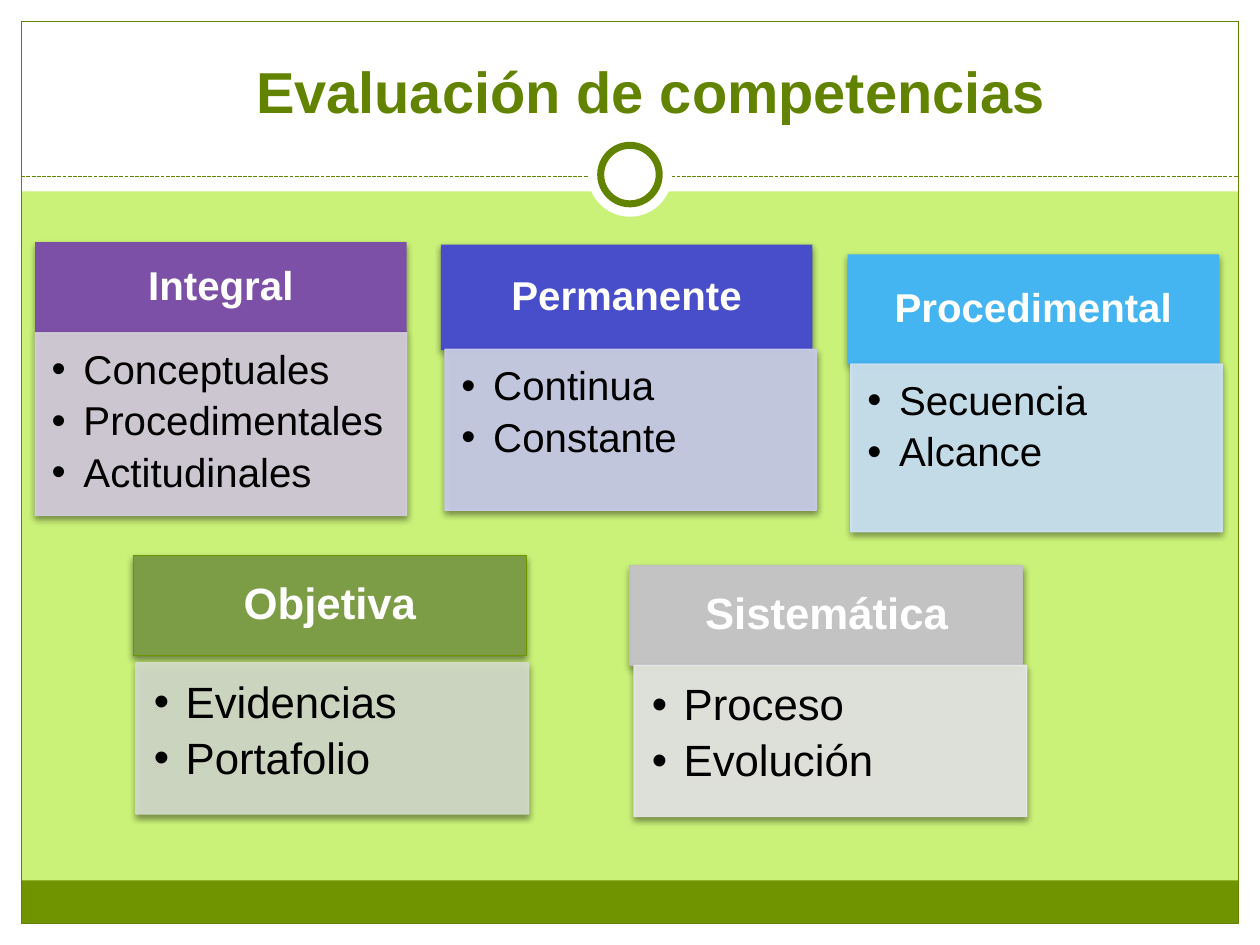
"""Build the slide on the five traits of competency assessment."""
from dataclasses import dataclass
from typing import Optional

from lxml.etree import SubElement as Sub
from pptx import Presentation
from pptx.dml.color import RGBColor as Rgb
from pptx.enum.dml import MSO_LINE as Dash
from pptx.enum.shapes import MSO_CONNECTOR as Link, MSO_SHAPE as Kind
from pptx.enum.text import MSO_ANCHOR as Anchor, PP_ALIGN as Align
from pptx.oxml.ns import qn
from pptx.util import Cm, Pt


@dataclass(frozen=True)
class Theme:
    back: str = "CAF278"
    white: str = "FFFFFF"
    black: str = "000000"
    green: str = "628300"
    band: str = "6F9400"
    edge: str = "BFBFBF"
    font: str = "Arial"
    title: float = 33
    large: float = 25
    small: float = 23
    thin: float = 0.75
    thick: float = 4


@dataclass(frozen=True)
class Box:
    left: float
    top: float
    width: float
    height: float

    def size(self) -> tuple:
        return Cm(self.left), Cm(self.top), Cm(self.width), Cm(self.height)


@dataclass(frozen=True)
class Card:
    name: str
    items: tuple[str, ...]
    head: Box
    body: Box
    dark: str
    light: str
    size: float
    edge: Optional[str] = None


THEME = Theme()
WIDE, HIGH, RIM = 25.4, 19.05, 0.43
WIDTH, BROAD = 7.49, 7.92
FRAME = Box(RIM, RIM, WIDE - 2 * RIM, HIGH - 2 * RIM)
MASKS = (
    Box(0, HIGH - RIM, WIDE, RIM),
    Box(0, 0, WIDE, 3.86),
    Box(0, 0, RIM, HIGH),
    Box(WIDE - RIM, 0, RIM, HIGH),
)
CARDS = (
    Card("Integral", ("Conceptuales", "Procedimentales", "Actitudinales"),
         Box(0.71, 4.88, WIDTH, 1.83), Box(0.71, 6.71, WIDTH, 3.68),
         "7D50A7", "D5CDDF", THEME.small),
    Card("Permanente", ("Continua", "Constante"),
         Box(8.89, 4.93, WIDTH, 2.13), Box(8.97, 7.04, WIDTH, 3.25),
         "484DC9", "CBCDEE", THEME.small),
    Card("Procedimental", ("Secuencia", "Alcance"),
         Box(17.09, 5.13, WIDTH, 2.21), Box(17.15, 7.34, WIDTH, 3.38),
         "45B5F1", "CCE4F9", THEME.small),
    Card("Objetiva", ("Evidencias", "Portafolio"),
         Box(2.69, 11.2, BROAD, 2.01), Box(2.74, 13.36, BROAD, 3.05),
         "7C9C45", "D5DCCC", THEME.large, THEME.band),
    Card("Sistemática", ("Proceso", "Evolución"),
         Box(12.7, 11.4, BROAD, 2.01), Box(12.78, 13.41, BROAD, 3.05),
         "C3C3C3", "E9E9E9", THEME.large, THEME.edge),
)


def draw(shapes, box: Box, fill: Optional[str] = None, line: Optional[str] = None,
         weight: float = THEME.thin, kind=Kind.RECTANGLE):
    """Add a flat preset shape."""
    shape = shapes.add_shape(kind, *box.size())
    shape.shadow.inherit = False
    if fill:
        shape.fill.solid()
        shape.fill.fore_color.rgb = Rgb.from_string(fill)
    else:
        shape.fill.background()
    if line:
        shape.line.color.rgb = Rgb.from_string(line)
        shape.line.width = Pt(weight)
    else:
        shape.line.fill.background()
    return shape


def shade(shape) -> None:
    """Give a shape a soft shadow below it."""
    glow = Sub(shape._element.spPr.find(qn("a:effectLst")), qn("a:outerShdw"),
               blurRad=str(Pt(4)), dist=str(Pt(2)), dir="5400000", rotWithShape="0")
    tone = Sub(glow, qn("a:srgbClr"), val=THEME.black)
    Sub(tone, qn("a:alpha"), val="45000")


def fade(shape) -> None:
    """Make the fill and line of a shape slightly clear."""
    for tone in list(shape._element.spPr.iter(qn("a:srgbClr"))):
        Sub(tone, qn("a:alpha"), val="90000")


def write(par, text: str, size: float, tint: str, bold: bool = False) -> None:
    """Add one styled run to a paragraph."""
    run = par.add_run()
    run.text = text
    font = run.font
    font.name, font.size, font.bold = THEME.font, Pt(size), bold
    font.color.rgb = Rgb.from_string(tint)


def inset(frame, left: float, top: float, right: float, base: float) -> None:
    """Set the margins of a text frame and let it wrap."""
    frame.word_wrap = True
    frame.margin_left, frame.margin_top = Cm(left), Cm(top)
    frame.margin_right, frame.margin_bottom = Cm(right), Cm(base)


def bullet(par, size: float) -> None:
    """Turn a paragraph into a spaced list item with a hanging bullet."""
    par.alignment, par.line_spacing = Align.LEFT, 0.9
    par.space_after = Pt(size * 0.2)
    props = par._p.get_or_add_pPr()
    props.set("marL", str(Cm(0.64)))
    props.set("indent", str(-Cm(0.64)))
    Sub(props, qn("a:buFont"), typeface=THEME.font)
    Sub(props, qn("a:buChar"), char="•")


def deal(shapes, card: Card) -> None:
    """Draw a card as a group of heading and list."""
    group = shapes.add_group_shape().shapes
    head = draw(group, card.head, card.dark, card.edge)
    shade(head)
    frame = head.text_frame
    inset(frame, card.size * 0.02, 0.26, card.size * 0.02, 0.26)
    frame.vertical_anchor = Anchor.MIDDLE
    par = frame.paragraphs[0]
    par.alignment, par.line_spacing = Align.CENTER, 0.9
    write(par, card.name, card.size, THEME.white, True)

    body = draw(group, card.body, card.light, card.light)
    fade(body)
    shade(body)
    frame = body.text_frame
    side = card.size * 0.0145
    inset(frame, side, side, card.size * 0.02, card.size * 0.022)
    frame.vertical_anchor = Anchor.TOP
    for spot, item in enumerate(card.items):
        par = frame.add_paragraph() if spot else frame.paragraphs[0]
        bullet(par, card.size)
        write(par, item, card.size, THEME.black)


def stage(shapes) -> None:
    """Draw the frame, the bands and the ring."""
    for mask in MASKS:
        draw(shapes, mask, THEME.white)
    draw(shapes, Box(RIM, 17.75, FRAME.width, 0.87), THEME.band)
    draw(shapes, FRAME, line=THEME.green)
    rule = shapes.add_connector(Link.STRAIGHT, Cm(RIM), Cm(3.56), Cm(WIDE - RIM), Cm(3.56))
    rule.line.color.rgb = Rgb.from_string(THEME.green)
    rule.line.width, rule.line.dash_style = Pt(THEME.thin), Dash.SQUARE_DOT
    Sub(rule._element.spPr, qn("a:effectLst"))
    draw(shapes, Box(11.85, 2.67, 1.7, 1.7), THEME.white, kind=Kind.OVAL)
    draw(shapes, Box(12.11, 2.93, 1.18, 1.18), THEME.white, THEME.green, THEME.thick, Kind.OVAL)


def head(shapes) -> None:
    """Write the slide title."""
    frame = shapes.add_textbox(*Box(1.27, 0.53, 23.7, 2.11).size()).text_frame
    frame.word_wrap, frame.vertical_anchor = True, Anchor.BOTTOM
    par = frame.paragraphs[0]
    par.alignment = Align.CENTER
    write(par, "Evaluación de competencias", THEME.title, THEME.green, True)


def main() -> None:
    """Build and save the slide."""
    deck = Presentation()
    deck.slide_width, deck.slide_height = Cm(WIDE), Cm(HIGH)
    slide = deck.slides.add_slide(deck.slide_layouts[6])
    slide.background.fill.solid()
    slide.background.fill.fore_color.rgb = Rgb.from_string(THEME.back)
    stage(slide.shapes)
    head(slide.shapes)
    for card in CARDS:
        deal(slide.shapes, card)
    deck.save("out.pptx")


if __name__ == "__main__":
    main()
